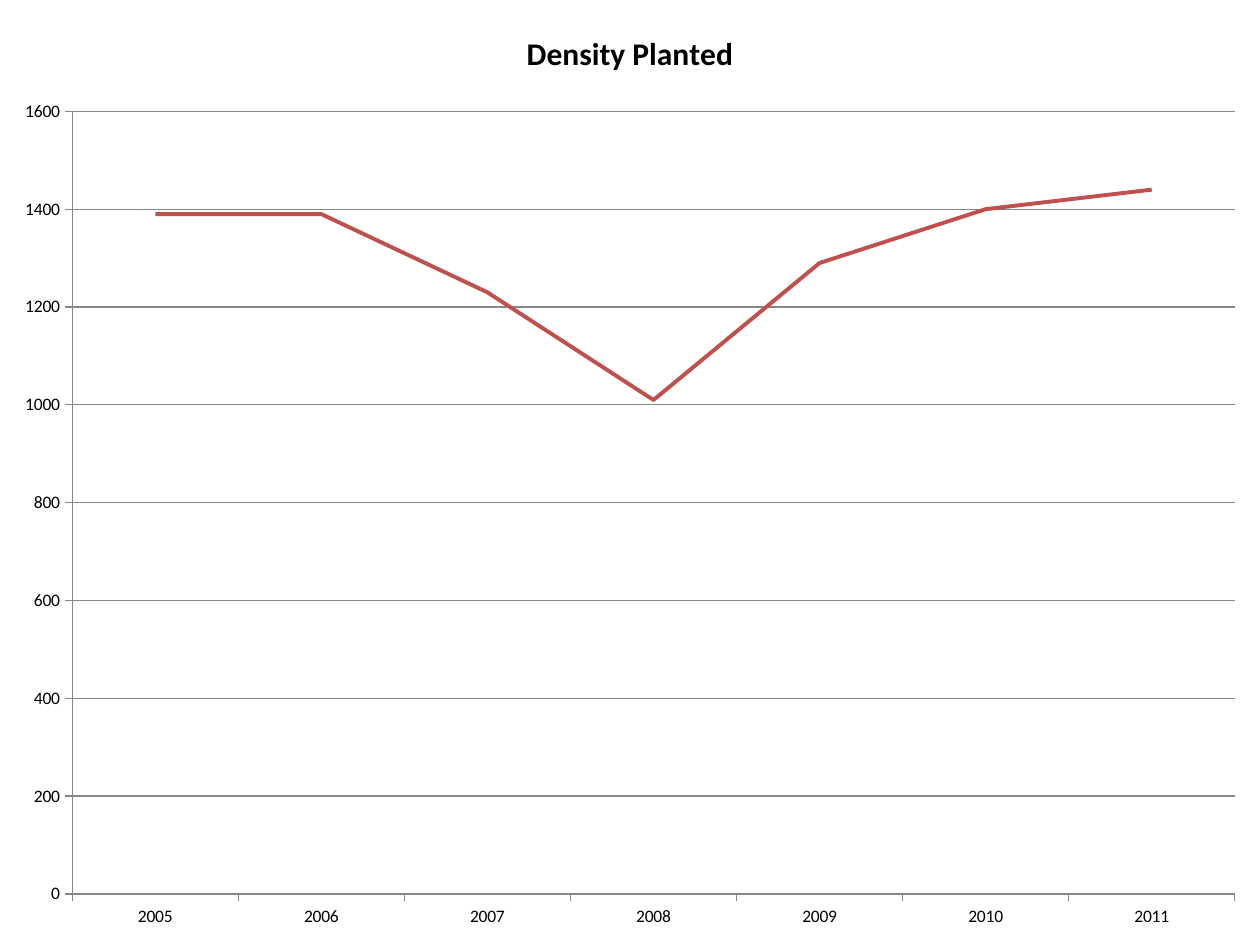
from pptx import Presentation
from pptx.chart.data import CategoryChartData
from pptx.dml.color import RGBColor
from pptx.enum.chart import XL_CHART_TYPE, XL_MARKER_STYLE, XL_TICK_MARK
from pptx.util import Cm, Pt

LINE_CHART = XL_CHART_TYPE.LINE
NO_MARKER = XL_MARKER_STYLE.NONE
TICK_OUTSIDE = XL_TICK_MARK.OUTSIDE
TICK_NONE = XL_TICK_MARK.NONE

TITLE = "Density Planted"
DENSITY_BY_YEAR = {
    "2005": 1390,
    "2006": 1390,
    "2007": 1230,
    "2008": 1010,
    "2009": 1290,
    "2010": 1400,
    "2011": 1440,
}
COLORS = {"text": "000000", "axis": "878787", "density": "C0504D"}
FONT = "Calibri"
SLIDE_WIDTH, SLIDE_HEIGHT = Cm(25.4), Cm(19.05)
BLANK_LAYOUT = 6


def color(name):
    return RGBColor.from_string(COLORS[name])


def style_font(font, size, bold=False):
    font.name = FONT
    font.size = Pt(size)
    font.bold = bold
    font.color.rgb = color("text")


def style_line(line, name, width):
    line.color.rgb = color(name)
    line.width = Pt(width)


def add_title(chart):
    chart.has_title = True
    chart.chart_title.include_in_layout = False
    run = chart.chart_title.text_frame.paragraphs[0].add_run()
    run.text = TITLE
    style_font(run.font, 18, bold=True)


def style_axes(chart):
    for axis in (chart.category_axis, chart.value_axis):
        axis.major_tick_mark = TICK_OUTSIDE
        axis.minor_tick_mark = TICK_NONE
        style_line(axis.format.line, "axis", 0.75)
    value_axis = chart.value_axis
    value_axis.minimum_scale = 0
    value_axis.maximum_scale = 1600
    value_axis.major_unit = 200
    value_axis.has_major_gridlines = True
    style_line(value_axis.major_gridlines.format.line, "axis", 0.75)


def add_density_chart(slide):
    data = CategoryChartData(number_format="General")
    data.categories = list(DENSITY_BY_YEAR)
    data.add_series(TITLE, list(DENSITY_BY_YEAR.values()))
    chart = slide.shapes.add_chart(
        LINE_CHART, Cm(0), Cm(0), SLIDE_WIDTH, SLIDE_HEIGHT, data
    ).chart
    style_font(chart.font, 10)
    chart.has_legend = False
    add_title(chart)
    style_axes(chart)
    plot = chart.plots[0]
    plot.vary_by_categories = False
    series = plot.series[0]
    series.smooth = False
    series.marker.style = NO_MARKER
    style_line(series.format.line, "density", 2.25)


def main():
    presentation = Presentation()
    presentation.slide_width = SLIDE_WIDTH
    presentation.slide_height = SLIDE_HEIGHT
    slide = presentation.slides.add_slide(presentation.slide_layouts[BLANK_LAYOUT])
    add_density_chart(slide)
    presentation.save("out.pptx")


if __name__ == "__main__":
    main()
